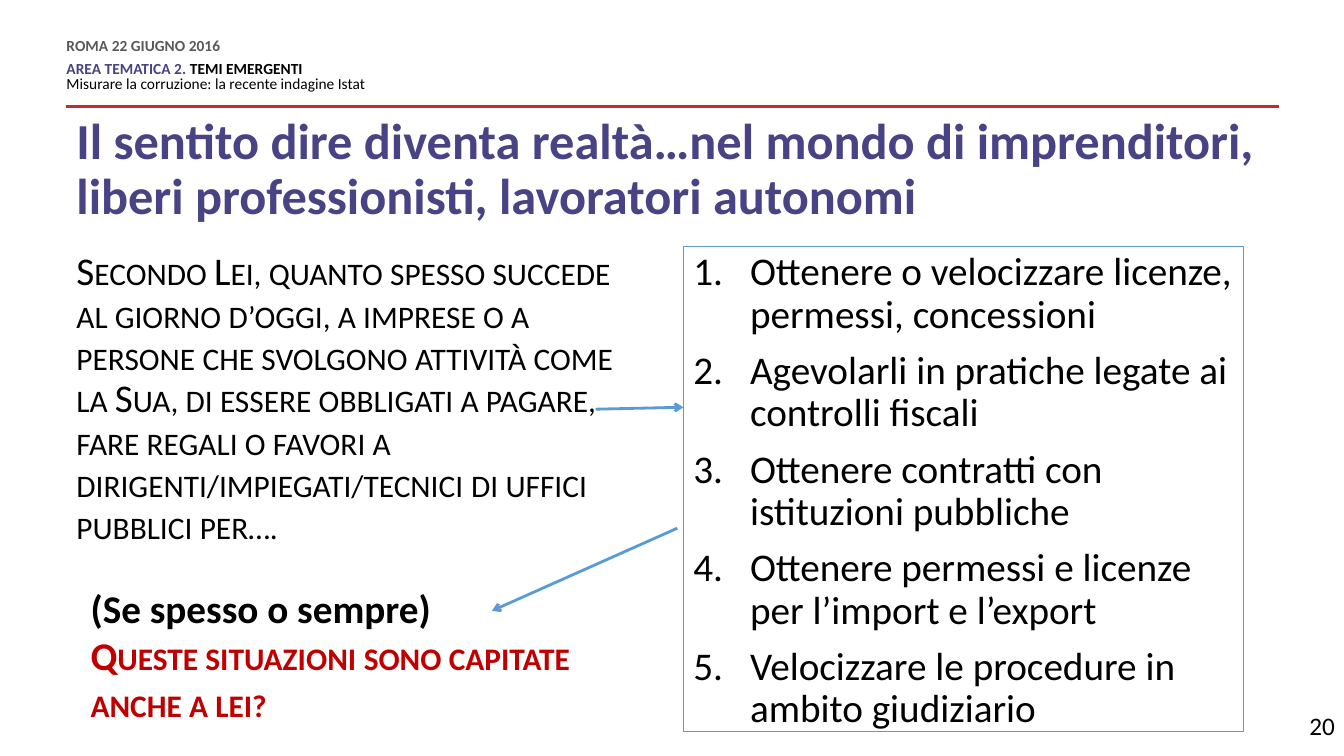
from dataclasses import dataclass

from lxml import etree
from pptx import Presentation
from pptx.dml.color import RGBColor
from pptx.enum.shapes import MSO_CONNECTOR, MSO_SHAPE
from pptx.enum.text import MSO_ANCHOR, PP_ALIGN
from pptx.oxml.ns import qn
from pptx.util import Pt

STRAIGHT = MSO_CONNECTOR.STRAIGHT
RECTANGLE = MSO_SHAPE.RECTANGLE
TOP, MIDDLE = MSO_ANCHOR.TOP, MSO_ANCHOR.MIDDLE
LEFT, RIGHT = PP_ALIGN.LEFT, PP_ALIGN.RIGHT


@dataclass(frozen=True)
class Theme:
    font: str = "Calibri"
    header_size: float = 11
    title_size: float = 36
    body_size: float = 28
    number_size: float = 18
    black: str = "000000"
    grey: str = "595959"
    violet: str = "484384"
    rule_red: str = "C72A31"
    accent_red: str = "C00000"
    blue: str = "5B9BD5"


THEME = Theme()


@dataclass(frozen=True)
class Line:
    """One paragraph; each piece is a text with its colour."""
    pieces: tuple[tuple[str, str], ...]
    size: float = THEME.body_size
    bold: bool = False
    small_caps: bool = False
    numbered: bool = False
    spacing: float | Pt = 1.0
    before: float = 0
    after: float = 0
    align: PP_ALIGN = LEFT


@dataclass(frozen=True)
class Block:
    """A text area with its place in points."""
    left: float
    top: float
    width: float
    height: float
    lines: tuple[Line, ...]
    anchor: MSO_ANCHOR = TOP
    margins: tuple[float, float] = (7.2, 3.6)
    outline: str = ""


@dataclass(frozen=True)
class Stroke:
    start: tuple[float, float]
    end: tuple[float, float]
    colour: str = THEME.blue
    arrow: bool = True


NUMBER_INDENT = 40.5
HEADER_SPACING = Pt(10.8)

SITUATIONS = (
    "Ottenere o velocizzare licenze, permessi, concessioni",
    "Agevolarli in pratiche legate ai controlli fiscali",
    "Ottenere contratti con istituzioni pubbliche",
    "Ottenere permessi e licenze per l’import e l’export",
    "Velocizzare le procedure in ambito giudiziario",
)

BLOCKS = (
    # Running header
    Block(47.5, 28, 600.5, 39.6, (
        Line((("ROMA 22 GIUGNO 2016", THEME.grey),), THEME.header_size,
             bold=True, spacing=HEADER_SPACING, after=6),
        Line((("AREA TEMATICA 2. ", THEME.violet), ("TEMI EMERGENTI", THEME.black)),
             THEME.header_size, bold=True, spacing=HEADER_SPACING),
        Line((("Misurare la corruzione: la recente indagine Istat", THEME.black),),
             THEME.header_size, spacing=HEADER_SPACING),
    ), margins=(0, 0)),
    # Title
    Block(47.5, 77, 872.6, 90, (
        Line((("Il sentito dire diventa realtà…nel mondo di imprenditori, "
               "liberi professionisti, lavoratori autonomi", THEME.violet),),
             THEME.title_size, bold=True, spacing=0.9),
    ), anchor=MIDDLE),
    # Survey question
    Block(47.5, 176.4, 400.3, 211.7, (
        Line((("Secondo Lei, quanto spesso succede al giorno d’oggi, a imprese o a "
               "persone che svolgono attività come la Sua, di essere obbligati a "
               "pagare, fare regali o favori a dirigenti/impiegati/tecnici di uffici "
               "pubblici per….", THEME.black),), small_caps=True, spacing=0.9),
    )),
    # Numbered situations
    Block(488.2, 176.4, 400.3, 346.3, tuple(
        Line(((situation, THEME.black),), numbered=True, spacing=0.9,
             before=10 if index else 0)
        for index, situation in enumerate(SITUATIONS)
    ), outline=THEME.blue),
    # Slide number
    Block(760.3, 504, 200.2, 36, (
        Line((("20", THEME.black),), THEME.number_size, align=RIGHT),
    )),
    # Follow-up question
    Block(57.6, 414, 367.9, 108.7, (
        Line((("(Se spesso o sempre)", THEME.black),), bold=True),
        Line((("Queste situazioni sono capitate anche a lei?", THEME.accent_red),),
             bold=True, small_caps=True),
    )),
)

STROKES = (
    Stroke((913.7, 76.3), (47.5, 76.3), THEME.rule_red, arrow=False),
    Stroke((483.8, 377.3), (351.4, 436.3)),
    Stroke((425.5, 292.3), (488.2, 290.9)),
)


def write_line(paragraph, line: Line) -> None:
    paragraph.alignment = line.align
    paragraph.line_spacing = line.spacing
    paragraph.space_after = Pt(line.after)
    if line.before:
        paragraph.space_before = Pt(line.before)
    if line.numbered:
        properties = paragraph._p.get_or_add_pPr()
        properties.set("marL", str(Pt(NUMBER_INDENT)))
        properties.set("indent", str(-Pt(NUMBER_INDENT)))
        etree.SubElement(properties, qn("a:buFont"), typeface="+mj-lt")
        etree.SubElement(properties, qn("a:buAutoNum"), type="arabicPeriod")
    font = paragraph.font
    font.name, font.size, font.bold = THEME.font, Pt(line.size), line.bold
    font.color.rgb = RGBColor.from_string(line.pieces[0][1])
    if line.small_caps:
        font._rPr.set("cap", "small")
    for text, colour in line.pieces:
        run = paragraph.add_run()
        run.text = text
        if len(line.pieces) > 1:
            run.font.color.rgb = RGBColor.from_string(colour)


def draw_block(slide, block: Block) -> None:
    place = [Pt(value) for value in (block.left, block.top, block.width, block.height)]
    if block.outline:
        shape = slide.shapes.add_shape(RECTANGLE, *place)
        shape.shadow.inherit = False
        shape.fill.background()
        shape.line.color.rgb = RGBColor.from_string(block.outline)
        shape.line.width = Pt(0.75)
    else:
        shape = slide.shapes.add_textbox(*place)
    frame = shape.text_frame
    frame.word_wrap = True
    frame.vertical_anchor = block.anchor
    horizontal, vertical = block.margins
    frame.margin_left = frame.margin_right = Pt(horizontal)
    frame.margin_top = frame.margin_bottom = Pt(vertical)
    for index, line in enumerate(block.lines):
        write_line(frame.add_paragraph() if index else frame.paragraphs[0], line)


def draw_stroke(slide, stroke: Stroke) -> None:
    ends = [Pt(value) for value in stroke.start + stroke.end]
    connector = slide.shapes.add_connector(STRAIGHT, *ends)
    connector.line.color.rgb = RGBColor.from_string(stroke.colour)
    connector.line.width = Pt(2)
    if stroke.arrow:
        etree.SubElement(connector.line._get_or_add_ln(), qn("a:tailEnd"), type="arrow")
    etree.SubElement(connector._element.spPr, qn("a:effectLst"))


def main() -> None:
    presentation = Presentation()
    presentation.slide_width, presentation.slide_height = Pt(960), Pt(540)
    slide = presentation.slides.add_slide(presentation.slide_layouts[6])
    for block in BLOCKS:
        draw_block(slide, block)
    for stroke in STROKES:
        draw_stroke(slide, stroke)
    presentation.save("out.pptx")


if __name__ == "__main__":
    main()
